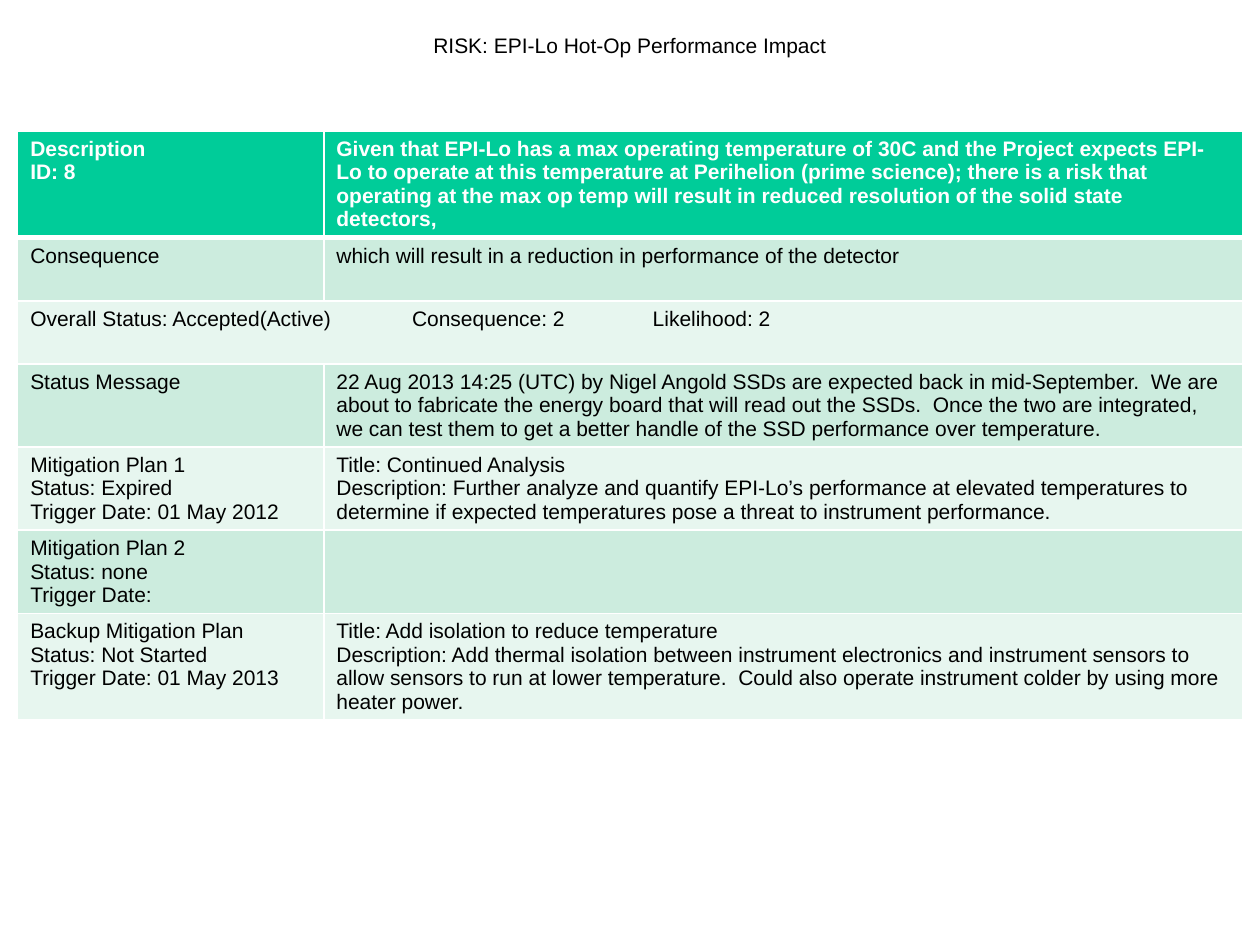
from typing import NamedTuple

from lxml import etree
from pptx import Presentation
from pptx.dml.color import RGBColor
from pptx.enum.text import MSO_ANCHOR, PP_ALIGN
from pptx.oxml.ns import qn
from pptx.table import _Cell
from pptx.text.text import TextFrame, _Paragraph
from pptx.util import Inches, Pt

MIDDLE = MSO_ANCHOR.MIDDLE
CENTER = PP_ALIGN.CENTER

BLACK = RGBColor(0x00, 0x00, 0x00)
WHITE = RGBColor(0xFF, 0xFF, 0xFF)
GREEN = RGBColor(0x00, 0xCC, 0x99)
BANDS = (RGBColor(0xE7, 0xF6, 0xEF), RGBColor(0xCC, 0xEC, 0xDE))

FONT = {"name": "Arial", "size": Pt(12)}
THIN, THICK = Pt(1), Pt(3)
COLUMN_WIDTHS = (2.43, 7.29)
ROW_HEIGHT = 0.5
STATUS_TABS = (3.03, 4.94)


class RiskRow(NamedTuple):
    label: str
    detail: str = ""
    merged: bool = False


RISK_ROWS = (
    RiskRow(
        "Description\nID: 8",
        "Given that EPI-Lo has a max operating temperature of 30C and the Project "
        "expects EPI-Lo to operate at this temperature at Perihelion (prime science); "
        "there is a risk that operating at the max op temp will result in reduced "
        "resolution of the solid state detectors,",
    ),
    RiskRow("Consequence", "which will result in a reduction in performance of the detector"),
    RiskRow("Overall Status: Accepted(Active)\tConsequence: 2\tLikelihood: 2", merged=True),
    RiskRow(
        "Status Message",
        "22 Aug 2013 14:25 (UTC) by Nigel Angold SSDs are expected back in "
        "mid-September.  We are about to fabricate the energy board that will read out "
        "the SSDs.  Once the two are integrated, we can test them to get a better "
        "handle of the SSD performance over temperature.",
    ),
    RiskRow(
        "Mitigation Plan 1\nStatus: Expired\nTrigger Date: 01 May 2012",
        "Title: Continued Analysis\n"
        "Description: Further analyze and quantify EPI-Lo’s performance at elevated "
        "temperatures to determine if expected temperatures pose a threat to "
        "instrument performance.",
    ),
    RiskRow("Mitigation Plan 2\nStatus: none\nTrigger Date:"),
    RiskRow(
        "Backup Mitigation Plan\nStatus: Not Started\nTrigger Date: 01 May 2013",
        "Title: Add isolation to reduce temperature\n"
        "Description: Add thermal isolation between instrument electronics and "
        "instrument sensors to allow sensors to run at lower temperature.  Could also "
        "operate instrument colder by using more heater power.",
    ),
)


def write_text(frame: TextFrame, text: str, color: RGBColor, bold: bool) -> None:
    frame.text = text
    for paragraph in frame.paragraphs:
        for name, value in {**FONT, "bold": bold}.items():
            setattr(paragraph.font, name, value)
        for run in paragraph.runs:
            for name, value in {**FONT, "bold": bold}.items():
                setattr(run.font, name, value)
            run.font.color.rgb = color


def set_borders(cell: _Cell, top: int, bottom: int) -> None:
    properties = cell._tc.get_or_add_tcPr()
    widths = {"a:lnL": THIN, "a:lnR": THIN, "a:lnT": top, "a:lnB": bottom}
    for position, (side, width) in enumerate(widths.items()):
        line = etree.Element(qn(side), w=str(int(width)))
        fill = etree.SubElement(line, qn("a:solidFill"))
        etree.SubElement(fill, qn("a:srgbClr"), val=str(WHITE))
        properties.insert(position, line)


def set_tabs(paragraph: _Paragraph, stops: tuple[float, ...]) -> None:
    properties = paragraph._p.get_or_add_pPr()
    tab_list = etree.Element(qn("a:tabLst"))
    properties.insert(0, tab_list)
    for stop in stops:
        etree.SubElement(tab_list, qn("a:tab"), pos=str(int(Inches(stop))), algn="l")


def fill_cell(cell: _Cell, text: str, row: int) -> None:
    header = row == 0
    write_text(cell.text_frame, text, WHITE if header else BLACK, header)
    cell.fill.solid()
    cell.fill.fore_color.rgb = GREEN if header else BANDS[row % 2]
    set_borders(cell, THICK if row == 1 else THIN, THICK if header else THIN)


def main() -> None:
    deck = Presentation()
    deck.slide_width, deck.slide_height = Inches(10), Inches(7.5)
    slide = deck.slides.add_slide(deck.slide_layouts[5])

    heading = slide.shapes.title
    place = {"left": 0.75, "top": 0.01, "width": 8.5, "height": 0.69}
    for name, value in place.items():
        setattr(heading, name, Inches(value))
    write_text(heading.text_frame, "RISK: EPI-Lo Hot-Op Performance Impact", BLACK, False)
    heading.text_frame.vertical_anchor = MIDDLE
    heading.text_frame.paragraphs[0].alignment = CENTER

    risk_table = slide.shapes.add_table(
        len(RISK_ROWS), len(COLUMN_WIDTHS), Inches(0.14), Inches(1.04),
        Inches(sum(COLUMN_WIDTHS)), Inches(ROW_HEIGHT * len(RISK_ROWS)),
    ).table
    for column, width in zip(risk_table.columns, COLUMN_WIDTHS):
        column.width = Inches(width)

    for index, risk in enumerate(RISK_ROWS):
        label, detail = risk_table.cell(index, 0), risk_table.cell(index, 1)
        fill_cell(label, risk.label, index)
        fill_cell(detail, risk.detail, index)
        if risk.merged:
            label.merge(detail)
            set_tabs(label.text_frame.paragraphs[0], STATUS_TABS)

    deck.save("out.pptx")


if __name__ == "__main__":
    main()
